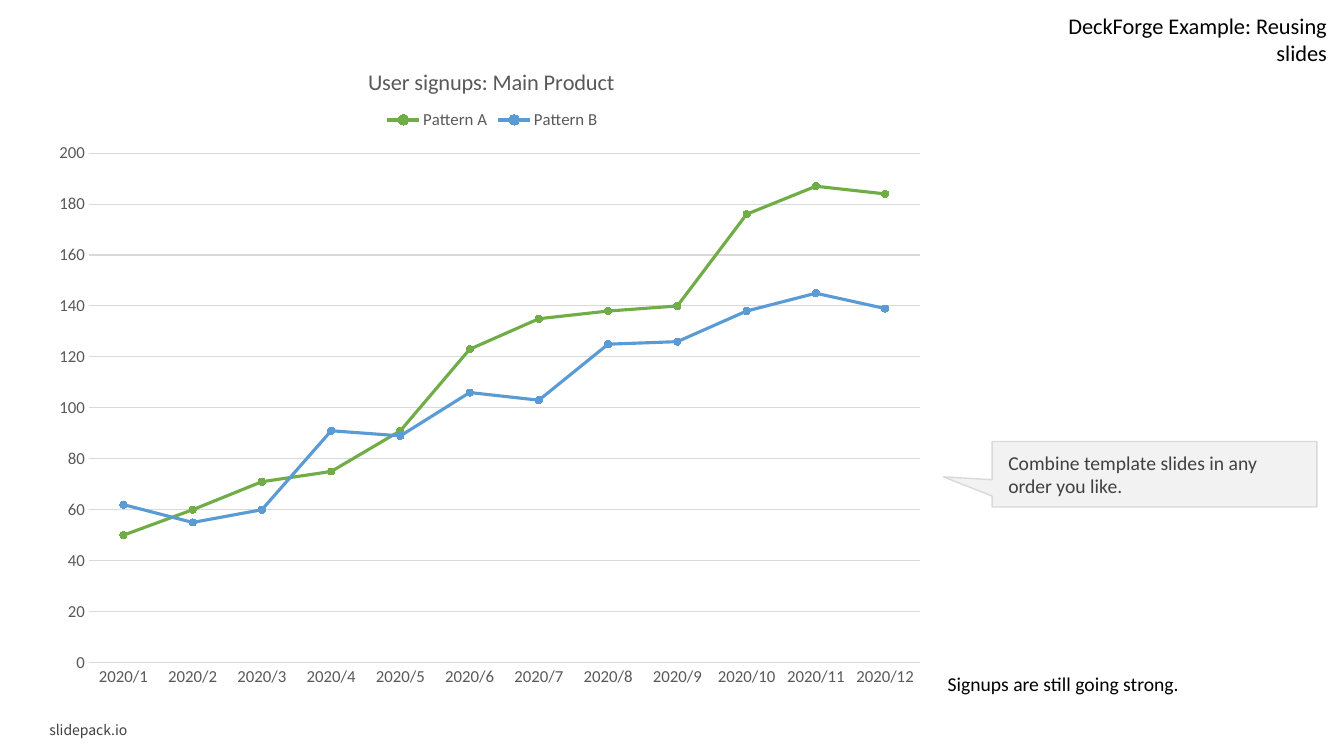
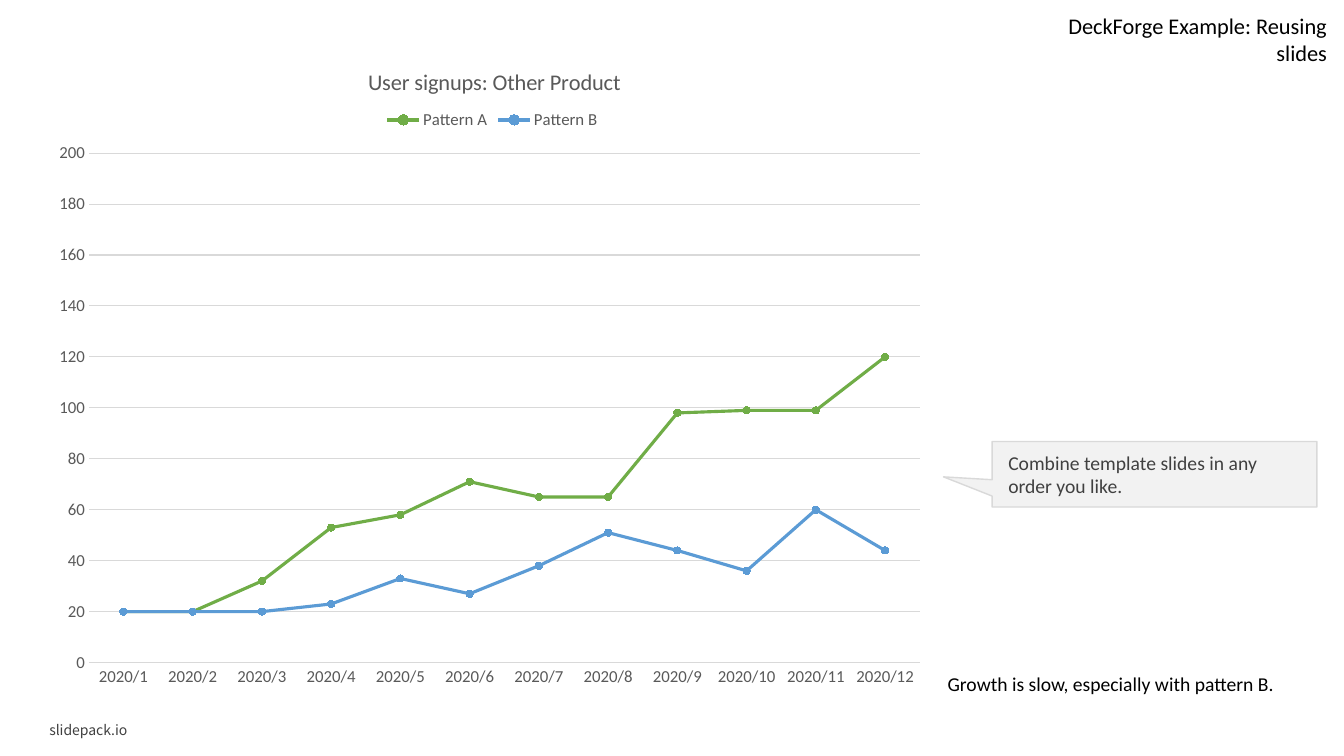
from dataclasses import dataclass

from lxml.etree import SubElement
from pptx import Presentation
from pptx.chart.chart import Chart
from pptx.chart.data import CategoryChartData
from pptx.dml.color import RGBColor
from pptx.enum.chart import XL_CHART_TYPE, XL_LEGEND_POSITION, XL_MARKER_STYLE, XL_TICK_MARK
from pptx.enum.shapes import MSO_SHAPE
from pptx.enum.text import MSO_ANCHOR, PP_ALIGN
from pptx.oxml.ns import qn
from pptx.shapes.autoshape import Shape
from pptx.slide import Slide
from pptx.text.text import Font
from pptx.util import Inches, Pt

BLACK = RGBColor(0x00, 0x00, 0x00)
DARK_GRAY = RGBColor(0x40, 0x40, 0x40)
CHART_GRAY = RGBColor(0x59, 0x59, 0x59)
RULE_GRAY = RGBColor(0xD9, 0xD9, 0xD9)
PALE_GRAY = RGBColor(0xF2, 0xF2, 0xF2)
GREEN = RGBColor(0x70, 0xAD, 0x47)
BLUE = RGBColor(0x5B, 0x9B, 0xD5)

BODY_FONT = "Calibri"
FOOTER_FONT = "Noto Sans CJK JP"
MONTHS = [f"2020/{month}" for month in range(1, 13)]
SERIES_COLORS = {"Pattern A": GREEN, "Pattern B": BLUE}


@dataclass(frozen=True)
class Area:
    left: float
    top: float
    width: float
    height: float

    def lengths(self) -> list[Inches]:
        return [Inches(side) for side in (self.left, self.top, self.width, self.height)]


@dataclass(frozen=True)
class Report:
    product: str
    comment: str
    signups: tuple[list[int], list[int]]


REPORTS = [
    Report(
        "Main Product",
        "Signups are still going strong.",
        (
            [50, 60, 71, 75, 91, 123, 135, 138, 140, 176, 187, 184],
            [62, 55, 60, 91, 89, 106, 103, 125, 126, 138, 145, 139],
        ),
    ),
    Report(
        "Other Product",
        "Growth is slow, especially with pattern B.",
        (
            [20, 20, 32, 53, 58, 71, 65, 65, 98, 99, 99, 120],
            [20, 20, 20, 23, 33, 27, 38, 51, 44, 36, 60, 44],
        ),
    ),
]


def style_font(font: Font, size: float, color: RGBColor, name: str = BODY_FONT) -> None:
    font.size = Pt(size)
    font.name = name
    font.bold = False
    font.color.rgb = color


def write(
    box: Shape,
    text: str,
    size: float,
    color: RGBColor,
    anchor: MSO_ANCHOR,
    align: PP_ALIGN = PP_ALIGN.LEFT,
    font_name: str = BODY_FONT,
    wrap: bool = True,
) -> None:
    frame = box.text_frame
    frame.text = text
    frame.word_wrap = wrap
    frame.vertical_anchor = anchor
    paragraph = frame.paragraphs[0]
    paragraph.alignment = align
    style_font(paragraph.runs[0].font, size, color, font_name)


def add_callout(page: Slide) -> None:
    callout = page.shapes.add_shape(
        MSO_SHAPE.RECTANGULAR_CALLOUT, *Area(9.84, 4.38, 3.22, 0.65).lengths()
    )
    callout.adjustments[0] = -0.65
    callout.adjustments[1] = 0.04
    callout.shadow.inherit = False
    callout.fill.solid()
    callout.fill.fore_color.rgb = PALE_GRAY
    callout.line.color.rgb = RULE_GRAY
    callout.line.width = Pt(1)
    frame = callout.text_frame
    frame.margin_left = frame.margin_right = Inches(0.16)
    frame.margin_top = frame.margin_bottom = Inches(0.16)
    write(callout, "Combine template slides in any order you like.", 14, DARK_GRAY, MSO_ANCHOR.MIDDLE)


def place_part(chart: Chart, tag: str, index: int, **fractions: float) -> None:
    part = next(chart.element.iter(qn(tag)))
    for layout in part.findall(qn("c:layout")):
        part.remove(layout)
    layout = SubElement(part, qn("c:layout"))
    part.insert(index, layout)
    manual = SubElement(layout, qn("c:manualLayout"))
    if "w" in fractions:
        SubElement(manual, qn("c:layoutTarget")).set("val", "inner")
    for side in ("x", "y"):
        SubElement(manual, qn(f"c:{side}Mode")).set("val", "edge")
    for side, fraction in fractions.items():
        SubElement(manual, qn(f"c:{side}")).set("val", str(fraction))


def style_axes(chart: Chart) -> None:
    for axis in (chart.category_axis, chart.value_axis):
        axis.major_tick_mark = axis.minor_tick_mark = XL_TICK_MARK.NONE
        style_font(axis.tick_labels.font, 12, CHART_GRAY)
    values = chart.value_axis
    values.minimum_scale, values.maximum_scale, values.major_unit = 0, 200, 20
    values.format.line.fill.background()
    for line in (chart.category_axis.format.line, values.major_gridlines.format.line):
        line.color.rgb = RULE_GRAY
        line.width = Pt(0.75)


def add_signup_chart(page: Slide, report: Report) -> None:
    data = CategoryChartData()
    data.categories = MONTHS
    for name, values in zip(SERIES_COLORS, report.signups):
        data.add_series(name, values)
    chart = page.shapes.add_chart(
        XL_CHART_TYPE.LINE_MARKERS, *Area(0.41, 0.36, 8.89, 6.59).lengths(), data
    ).chart
    style_font(chart.font, 10, BLACK)
    style_axes(chart)

    title = chart.chart_title
    title.text_frame.text = f"User signups: {report.product}"
    style_font(title.text_frame.paragraphs[0].runs[0].font, 16, CHART_GRAY)
    title.include_in_layout = False
    chart.has_legend = True
    chart.legend.position = XL_LEGEND_POSITION.TOP
    chart.legend.include_in_layout = False
    style_font(chart.legend.font, 12, CHART_GRAY)

    plot = chart.plots[0]
    plot.vary_by_categories = False
    for series in plot.series:
        color = SERIES_COLORS[series.name]
        series.smooth = False
        series.format.line.color.rgb = color
        series.format.line.width = Pt(2.25)
        series.marker.style = XL_MARKER_STYLE.CIRCLE
        series.marker.size = 5
        series.marker.format.fill.solid()
        series.marker.format.fill.fore_color.rgb = color
        series.marker.format.line.color.rgb = color

    place_part(chart, "c:title", 1, x=0.36, y=0.04)
    place_part(chart, "c:legend", 1, x=0.38, y=0.105)
    place_part(chart, "c:plotArea", 0, x=0.053, y=0.176, w=0.927, h=0.767)


def add_report_page(deck: Presentation, report: Report) -> None:
    page = deck.slides.add_slide(deck.slide_layouts[6])
    footer = page.shapes.add_textbox(*Area(0.39, 7.12, 2.91, 0.25).lengths())
    write(footer, "slidepack.io", 10, DARK_GRAY, MSO_ANCHOR.MIDDLE, font_name=FOOTER_FONT)
    add_signup_chart(page, report)
    comment = page.shapes.add_textbox(*Area(9.3, 3.95, 3.76, 3).lengths())
    write(comment, report.comment, 14, BLACK, MSO_ANCHOR.BOTTOM)
    add_callout(page)
    heading = page.shapes.add_textbox(*Area(10.01, 0.07, 3.25, 0.37).lengths())
    write(
        heading, "DeckForge Example: Reusing slides", 16, BLACK,
        MSO_ANCHOR.TOP, PP_ALIGN.RIGHT, wrap=False,
    )


def main() -> None:
    deck = Presentation()
    deck.slide_width, deck.slide_height = Inches(13.33), Inches(7.5)
    for report in REPORTS:
        add_report_page(deck, report)
    deck.save("out.pptx")


if __name__ == "__main__":
    main()
